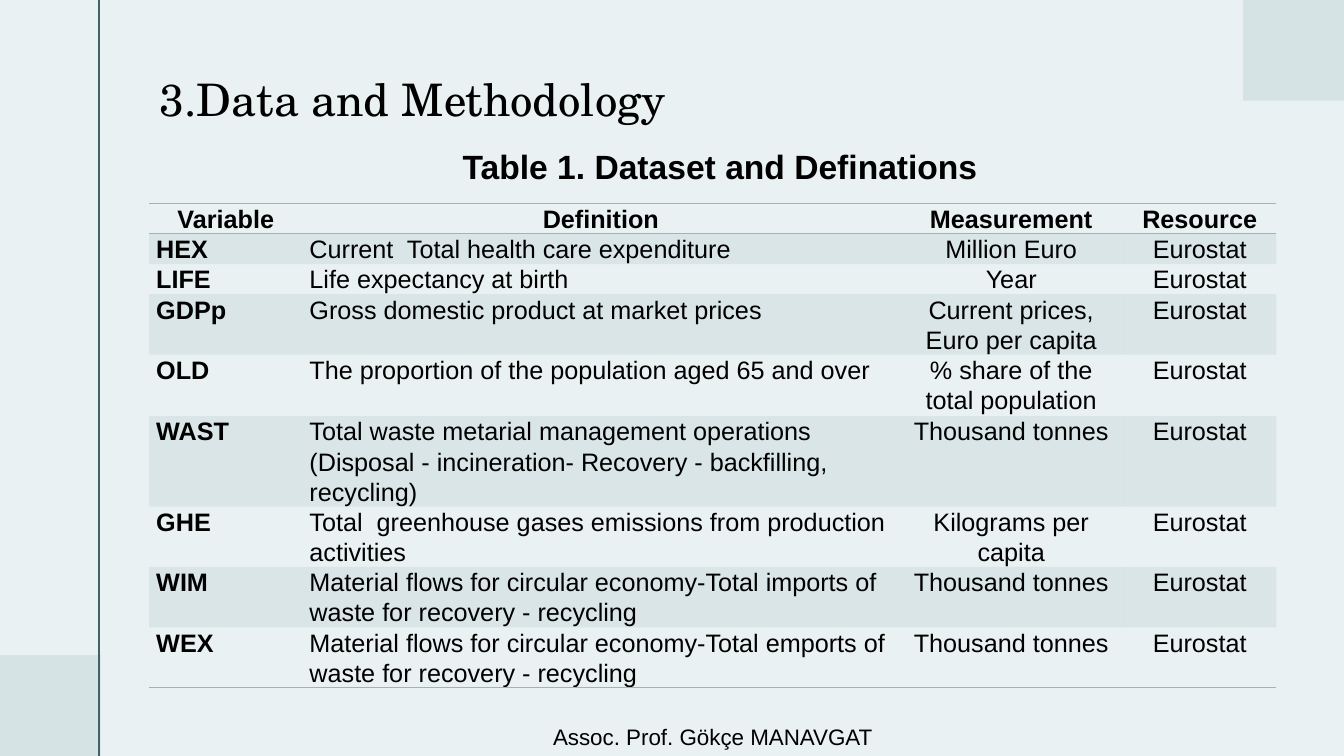
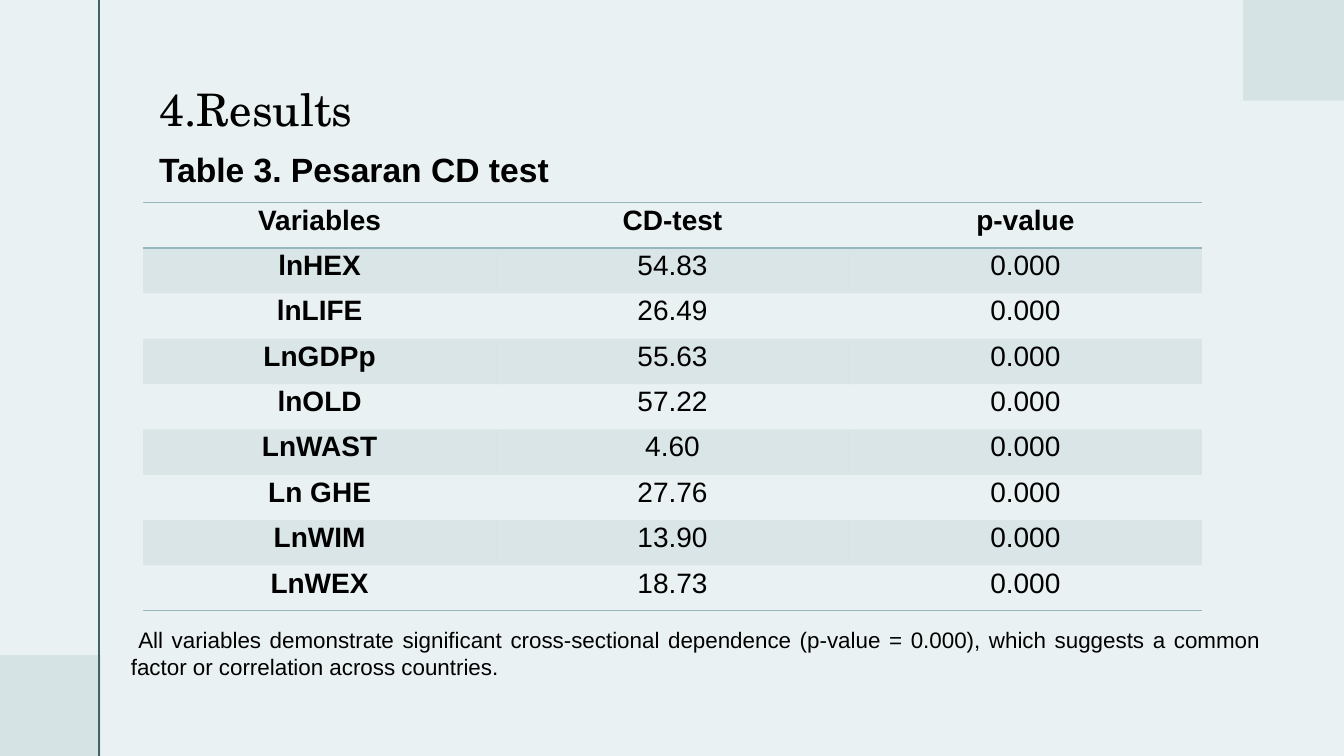
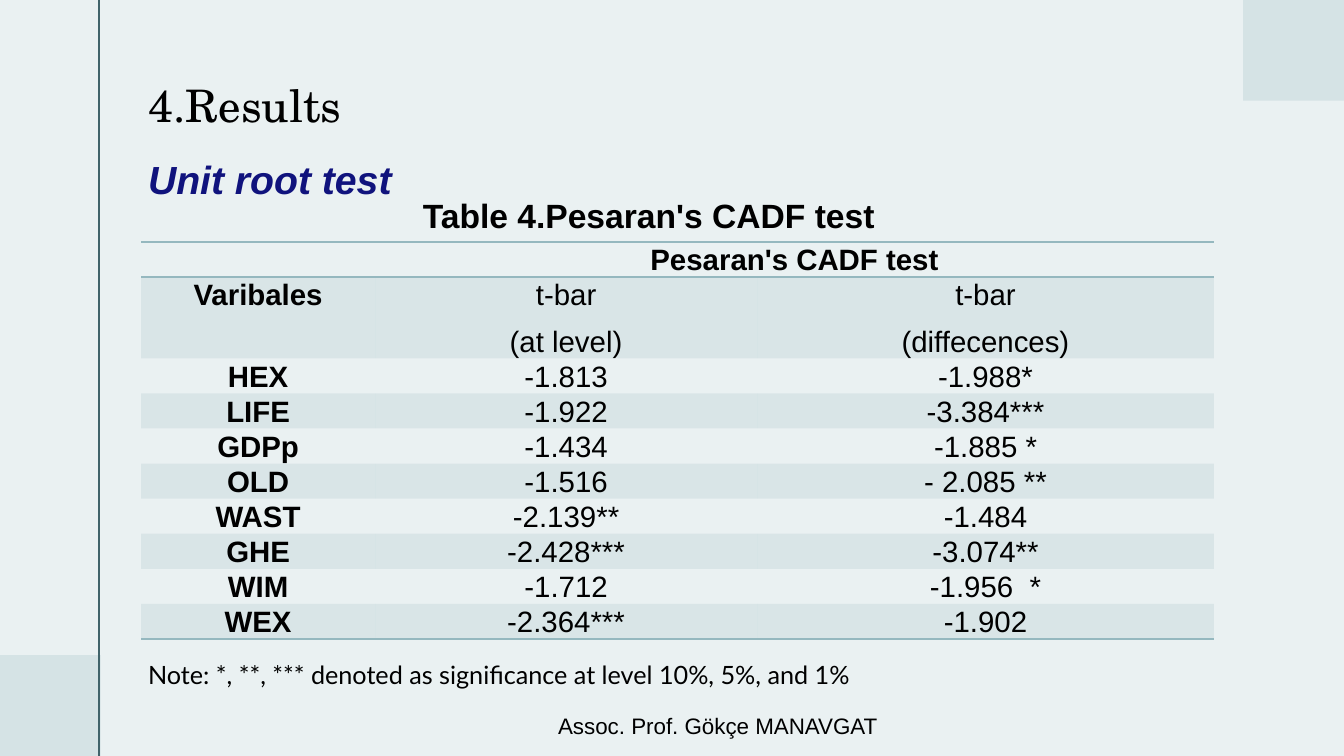
from lxml import etree
from pptx import Presentation
from pptx.dml.color import RGBColor
from pptx.enum.shapes import MSO_CONNECTOR, MSO_SHAPE
from pptx.enum.text import MSO_ANCHOR, MSO_AUTO_SIZE, PP_ALIGN
from pptx.oxml.ns import qn
from pptx.util import Inches, Pt

PAPER, SQUARE, RULE, ACCENT = "EAF1F2", "D5E3E5", "40636A", "95B8BF"
BLACK, NAVY = "000000", "10137D"
PLAIN_TABLE = "{2D5ABB26-0587-4C30-8999-92F81FD0307C}"
LEFT, CENTER, JUSTIFY = PP_ALIGN.LEFT, PP_ALIGN.CENTER, PP_ALIGN.JUSTIFY


def rgb(color):
    return RGBColor.from_string(color)


def style(p, size, align=LEFT, bold=False, italic=False, font="Arial", color=BLACK):
    p.alignment = align
    p.font.name, p.font.size = font, Pt(size)
    p.font.bold, p.font.italic = bold, italic
    p.font.color.rgb = rgb(color)


footer = "Assoc. Prof. Gökçe MANAVGAT"
tonnes = "Thousand tonnes"
flows = "Material flows for circular economy-Total {} of waste for recovery - recycling"

definitions = [
    ("HEX", "Current  Total health care expenditure", "Million Euro"),
    ("LIFE", "Life expectancy at birth", "Year"),
    ("GDPp", "Gross domestic product at market prices", "Current prices, Euro per capita"),
    ("OLD", "The proportion of the population aged 65 and over", "% share of the total population"),
    ("WAST", "Total waste metarial management operations (Disposal - incineration- "
             "Recovery - backfilling, recycling)", tonnes),
    ("GHE", "Total  greenhouse gases emissions from production activities", "Kilograms per capita"),
    ("WIM", flows.format("imports"), tonnes),
    ("WEX", flows.format("emports"), tonnes),
]
cd_tests = [
    ("lnHEX", "54.83"), ("lnLIFE", "26.49"), ("LnGDPp", "55.63"), ("lnOLD", "57.22"),
    ("LnWAST", "4.60"), ("Ln GHE", "27.76"), ("LnWIM", "13.90"), ("LnWEX", "18.73"),
]
unit_roots = [
    ("", "Pesaran's CADF test", ""),
    ("Varibales", "t-bar\n(at level)", "t-bar\n(diffecences)"),
    ("HEX", "-1.813", "-1.988*"),
    ("LIFE", "-1.922", "-3.384***"),
    ("GDPp", "-1.434", "-1.885 *"),
    ("OLD", "-1.516", "- 2.085 **"),
    ("WAST", "-2.139**", "-1.484"),
    ("GHE", "-2.428***", "-3.074**"),
    ("WIM", "-1.712", "-1.956  *"),
    ("WEX", "-2.364***", "-1.902"),
]

# Texts: wording, box, paragraph style
slides = [
    dict(
        title="3.Data and Methodology", at=(1.48, 0.22),
        table_at=(1.48, 2.02), size=18, left_columns=2,
        widths=[1.52, 5.92, 2.22, 1.52],
        heights=[0.27, 0.27, 0.27, 0.54, 0.61, 0.54, 0.27, 0.54, 0.54],
        rows=[("Variable", "Definition", "Measurement", "Resource")]
        + [(*row, "Eurostat") for row in definitions],
        texts=[
            ("Table 1. Dataset and Definations", (4.49, 1.4, 5.57, 0.5), dict(size=24, bold=True)),
            (footer, (3.94, 7.13, 6.26, 0.37), dict(size=16, align=CENTER)),
        ],
    ),
    dict(
        title="4.Results", at=(1.48, 0.32),
        table_at=(1.42, 2.01), size=20, left_columns=0,
        widths=[3.5] * 3, heights=[0.45] * 9,
        rows=[("Variables", "CD-test", "p-value")] + [(*row, "0.000") for row in cd_tests],
        texts=[
            ("Table 3. Pesaran CD test", (1.48, 1.43, 6.67, 0.5), dict(size=24, bold=True)),
            (" All variables demonstrate significant cross-sectional dependence (p-value = 0.000), "
             "which suggests a common factor or correlation across countries.",
             (1.2, 6.16, 11.4, 0.67), dict(size=16, align=JUSTIFY)),
        ],
    ),
    dict(
        title="4.Results", at=(1.37, 0.28),
        table_at=(1.4, 2.4), size=21, left_columns=0,
        widths=[2.32, 3.79, 4.53], heights=[0.21] * 10,
        rows=unit_roots,
        texts=[
            ("Unit root test", (1.37, 1.49, 6.67, 0.57),
             dict(size=28, bold=True, italic=True, color=NAVY)),
            ("Table 4.Pesaran's CADF test", (3.1, 1.88, 6.67, 0.51),
             dict(size=24, bold=True, align=CENTER)),
            ("Note: *, **, *** denoted as significance at level 10%, 5%, and 1%",
             (1.37, 6.49, 10.52, 0.41), dict(size=18, font="Lato")),
            (footer, (3.99, 7.02, 6.26, 0.37), dict(size=16, align=CENTER)),
        ],
    ),
]

prs = Presentation()
prs.slide_width, prs.slide_height = Inches(13.33), Inches(7.5)
layout = prs.slide_layouts.get_by_name("Title Only")
pages = [prs.slides.add_slide(layout) for _ in slides]

# Shared decoration, drawn once and moved to the master
master = prs.slide_master
master.background.fill.solid()
master.background.fill.fore_color.rgb = rgb(PAPER)
decoration = []
for x, y in [(0, 6.5), (12.33, 0)]:
    square = pages[0].shapes.add_shape(MSO_SHAPE.RECTANGLE, Inches(x), Inches(y), Inches(1), Inches(1))
    square.shadow.inherit = False
    square.fill.solid()
    square.fill.fore_color.rgb = rgb(SQUARE)
    square.line.fill.background()
    decoration.append(square)
rule = pages[0].shapes.add_connector(
    MSO_CONNECTOR.STRAIGHT, Inches(0.98), 0, Inches(0.98), prs.slide_height)
rule.line.color.rgb = rgb(RULE)
rule.line.width = Pt(1.5)
etree.SubElement(rule.element.spPr, qn("a:effectLst"))
decoration.append(rule)
for i, shape in enumerate(decoration):
    shape.element.xpath(".//p:cNvPr")[0].set("id", str(100 + i))
    master.element.cSld.spTree.insert(2 + i, shape.element)

for s, page in zip(slides, pages):
    title = page.shapes.title
    title.left, title.top = (Inches(v) for v in s["at"])
    title.width, title.height = Inches(10.85), Inches(1.57)
    tf = title.text_frame
    tf.text = s["title"]
    tf.auto_size = MSO_AUTO_SIZE.NONE
    tf.vertical_anchor = MSO_ANCHOR.BOTTOM
    tf.margin_bottom = Inches(0.54)
    p = tf.paragraphs[0]
    p.line_spacing = 0.9
    style(p, 32, font="TeX Gyre Schola")

    rows, widths, heights = s["rows"], s["widths"], s["heights"]
    x, y = s["table_at"]
    table = page.shapes.add_table(
        len(rows), len(widths), Inches(x), Inches(y),
        Inches(sum(widths)), Inches(sum(heights))).table
    table.first_row = table.horz_banding = False
    table._tbl.tblPr.find(qn("a:tableStyleId")).text = PLAIN_TABLE
    for column, width in zip(table.columns, widths):
        column.width = Inches(width)
    for r, (row, height) in enumerate(zip(rows, heights)):
        table.rows[r].height = Inches(height)
        edges = {0: ["a:lnT", "a:lnB"], len(rows) - 1: ["a:lnB"]}.get(r, [])
        for c, wording in enumerate(row):
            cell = table.cell(r, c)
            cell.text = wording
            cell.margin_left = cell.margin_right = Inches(0.07)
            cell.margin_top = cell.margin_bottom = 0
            for p in cell.text_frame.paragraphs:
                p.line_spacing, p.space_after = 1.07, Pt(8)
                style(p, s["size"], LEFT if r and c < s["left_columns"] else CENTER,
                      bold=r == 0 or c == 0)
            tc_pr = cell._tc.get_or_add_tcPr()
            for edge in edges:
                ln = etree.SubElement(tc_pr, qn(edge), w=str(Pt(1)))
                fill = etree.SubElement(ln, qn("a:solidFill"))
                etree.SubElement(fill, qn("a:srgbClr"), val=ACCENT)
            if r % 2:
                cell.fill.solid()
                cell.fill.fore_color.rgb = rgb(ACCENT)
                etree.SubElement(tc_pr.find(qn("a:solidFill"))[0], qn("a:alpha"), val="20000")
            else:
                cell.fill.background()
    if rows is unit_roots:
        table.cell(0, 1).merge(table.cell(0, 2))

    for wording, box, look in s["texts"]:
        tf = page.shapes.add_textbox(*(Inches(v) for v in box)).text_frame
        tf.word_wrap = True
        tf.text = wording
        style(tf.paragraphs[0], **look)

prs.save("out.pptx")
